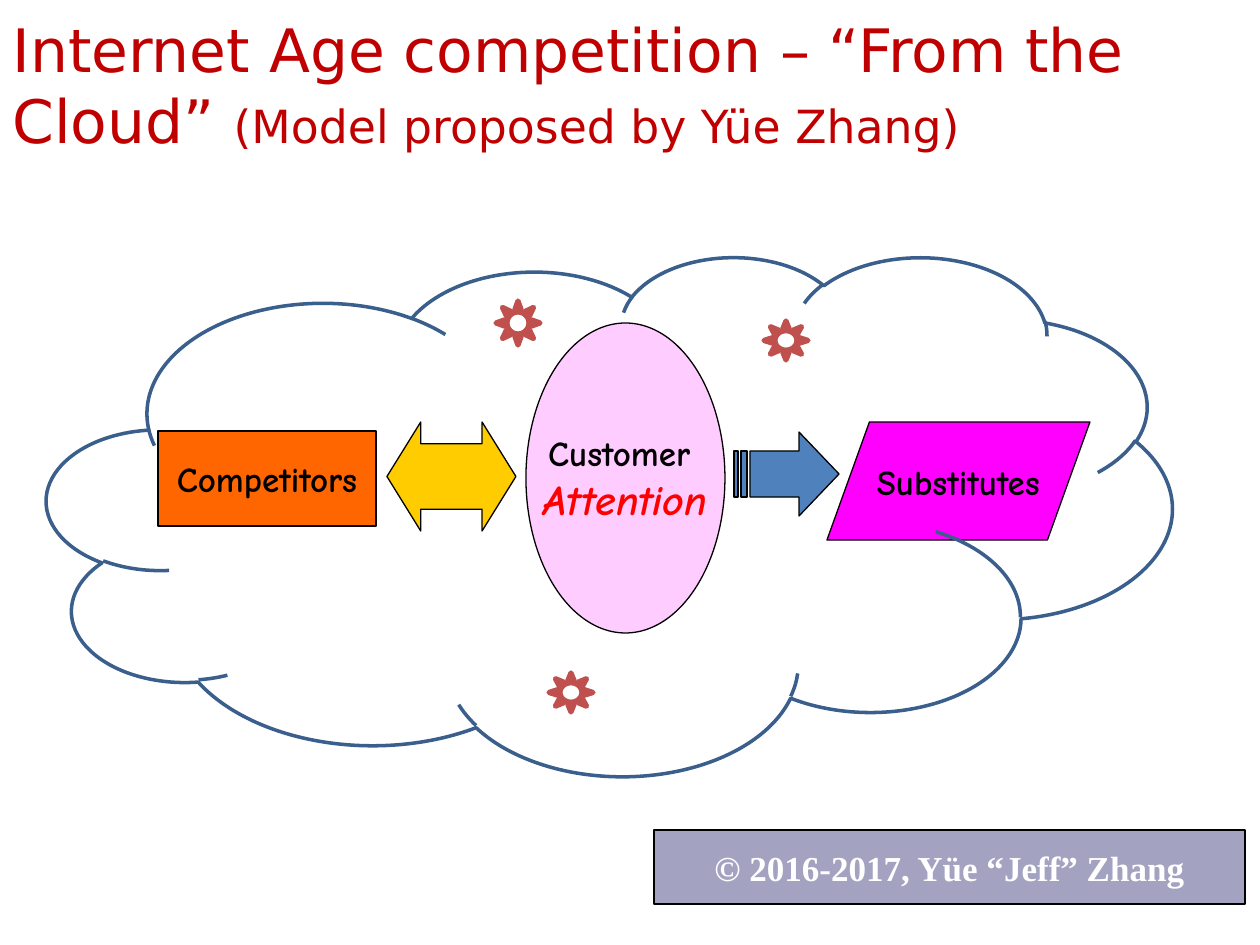
from dataclasses import dataclass

from pptx import Presentation
from pptx.dml.color import RGBColor
from pptx.enum.shapes import MSO_SHAPE as Preset
from pptx.enum.text import MSO_ANCHOR as Anchor, MSO_AUTO_SIZE as AutoSize, PP_ALIGN as Align
from pptx.util import Emu, Pt

EMU_PER_PX = 914400 / 126


@dataclass(frozen=True)
class Theme:
    title_font: str = "DejaVu Sans"
    label_font: str = "Comic Neue"
    credit_font: str = "Times New Roman"
    title_size: float = 34.2
    subtitle_size: float = 26.1
    label_size: float = 20
    accent_size: float = 24
    thin: float = 0.75
    medium: float = 2
    thick: float = 3
    title: str = "C00000"
    black: str = "000000"
    white: str = "FFFFFF"
    accent: str = "FF0000"
    competitors: str = "FF6600"
    customer: str = "FFCCFF"
    rivalry: str = "FFCC00"
    substitutes: str = "FF00FF"
    switching: str = "4F81BD"
    sun: str = "C0504D"
    credit: str = "A3A3C1"
    cloud: str = "3A5F8C"


THEME = Theme()


def px(value):
    return Emu(round(value * EMU_PER_PX))


def style_run(run, font, size, color, bold=False, italic=False):
    run.font.name = font
    run.font.size = Pt(size)
    run.font.color.rgb = RGBColor.from_string(color)
    run.font.bold = bold
    run.font.italic = italic


def style_shape(shape, fill, line=THEME.black, width=THEME.thin):
    shape.shadow.inherit = False
    if fill:
        shape.fill.solid()
        shape.fill.fore_color.rgb = RGBColor.from_string(fill)
    else:
        shape.fill.background()
    shape.line.color.rgb = RGBColor.from_string(line)
    shape.line.width = Pt(width)


def add_preset(slide, preset, box, fill, line=THEME.black, width=THEME.thin, adjustments=()):
    shape = slide.shapes.add_shape(preset, *map(px, box))
    style_shape(shape, fill, line, width)
    for index, value in enumerate(adjustments):
        shape.adjustments[index] = value
    return shape


def add_label(shape, text, font=THEME.label_font, color=THEME.black):
    frame = shape.text_frame
    frame.text = text
    frame.word_wrap = False
    frame.vertical_anchor = Anchor.MIDDLE
    for paragraph in frame.paragraphs:
        paragraph.alignment = Align.CENTER
        style_run(paragraph.runs[0], font, THEME.label_size, color, bold=True)


def add_title(slide, box):
    title = slide.shapes.title
    title.left, title.top, title.width, title.height = map(px, box)
    frame = title.text_frame
    frame.text = "Internet Age competition – “From the Cloud” "
    frame.word_wrap = True
    frame.auto_size = AutoSize.NONE
    frame.vertical_anchor = Anchor.MIDDLE
    paragraph = frame.paragraphs[0]
    paragraph.alignment = Align.LEFT
    subtitle = paragraph.add_run()
    subtitle.text = "(Model proposed by Yüe Zhang)"
    for run, size in zip(paragraph.runs, (THEME.title_size, THEME.subtitle_size)):
        style_run(run, THEME.title_font, size, THEME.title)


def add_striped_arrow(slide, box):
    left, top, width, height = box
    upper, lower = top + 19, top + height - 19
    shoulder = left + 65
    head = [(shoulder, top), (shoulder, upper), (left + 16, upper), (left + 16, lower),
            (shoulder, lower), (shoulder, top + height), (left + width, top + height / 2)]
    stripes = [[(start, upper), (start, lower), (end, lower), (end, upper)]
               for start, end in ((left + 7, left + 13), (left, left + 4))]
    builder = slide.shapes.build_freeform(*head[0], scale=EMU_PER_PX)
    builder.add_line_segments(head[1:], close=True)
    for stripe in stripes:
        builder.move_to(*stripe[0])
        builder.add_line_segments(stripe[1:], close=True)
    style_shape(builder.convert_to_shape(), THEME.switching)


def add_model(slide, box):
    left, top, width, height = box

    def inside(x, y, part_width, part_height):
        return left + x, top + y, part_width, part_height

    competitors = add_preset(slide, Preset.RECTANGLE, inside(111, 175, 218, 95), THEME.competitors)
    add_label(competitors, "Competitors")

    customer = add_preset(slide, Preset.OVAL, inside(479, 67, 199, 310), THEME.customer)
    add_label(customer, "Customer \nAttention")
    attention = customer.text_frame.paragraphs[1].runs[0]
    style_run(attention, THEME.label_font, THEME.accent_size, THEME.accent, bold=True, italic=True)

    add_preset(slide, Preset.LEFT_RIGHT_ARROW, inside(340, 166, 129, 109), THEME.rivalry,
               adjustments=(0.6, 0.31))

    substitutes = add_preset(slide, Preset.PARALLELOGRAM, inside(780, 166, 263, 118),
                             THEME.substitutes, adjustments=(0.36,))
    add_label(substitutes, "Substitutes")

    add_striped_arrow(slide, inside(687, 176, 105, 84))
    for sun_box in ((449, 45, 44, 44), (502, 417, 44, 39), (717, 65, 44, 39)):
        add_preset(slide, Preset.SUN, inside(*sun_box), THEME.white, THEME.sun, THEME.thick)
    add_preset(slide, Preset.CLOUD, box, None, THEME.cloud, THEME.medium)


def add_credit(slide, box):
    credit = add_preset(slide, Preset.RECTANGLE, box, THEME.credit)
    add_label(credit, "© 2016-2017, Yüe “Jeff” Zhang", THEME.credit_font, THEME.white)


def main():
    presentation = Presentation()
    presentation.slide_width, presentation.slide_height = px(1260), px(945)
    slide = presentation.slides.add_slide(presentation.slide_layouts[5])
    add_title(slide, (0, 21, 1218, 126))
    add_model(slide, (47, 256, 1125, 519))
    add_credit(slide, (654, 830, 591, 74))
    presentation.save("out.pptx")


if __name__ == "__main__":
    main()
